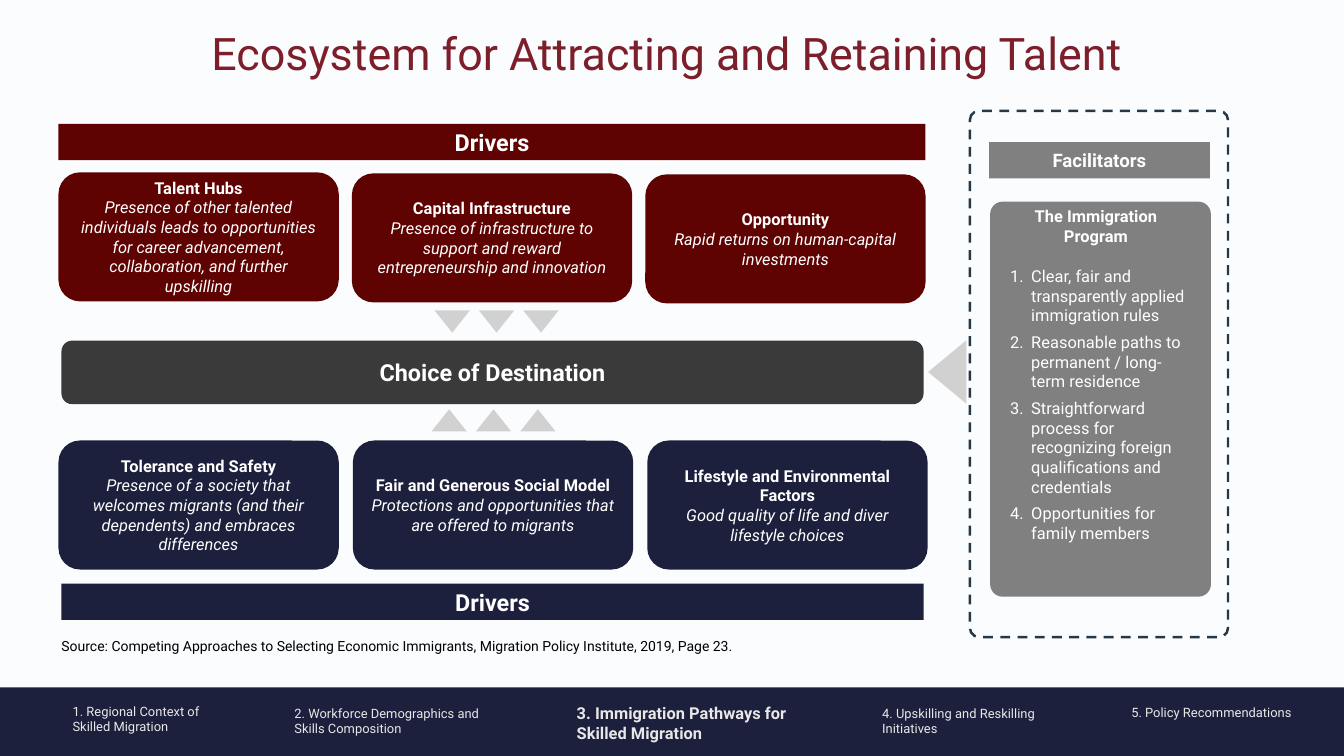
from lxml import etree
from pptx import Presentation
from pptx.dml.color import RGBColor
from pptx.enum import dml, shapes, text
from pptx.oxml import ns
from pptx.util import Inches, Pt

FONT = "Roboto"
PAPER = RGBColor(0xFB, 0xFC, 0xFE)
NAVY = RGBColor(0x1D, 0x20, 0x3C)
MAROON = RGBColor(0x5E, 0x02, 0x02)
CRIMSON = RGBColor(0x7D, 0x1E, 0x2B)
CHARCOAL = RGBColor(0x3A, 0x3A, 0x3A)
GREY = RGBColor(0x80, 0x80, 0x80)
ARROW_GREY = RGBColor(0xD1, 0xD1, 0xD1)
DASH_BLUE = RGBColor(0x26, 0x37, 0x45)
FOOTER_TEXT = RGBColor(0xE8, 0xE8, 0xE8)
WHITE = RGBColor(0xFF, 0xFF, 0xFF)
BLACK = RGBColor(0x00, 0x00, 0x00)

RECT = shapes.MSO_SHAPE.RECTANGLE
ROUND = shapes.MSO_SHAPE.ROUNDED_RECTANGLE
TRIANGLE = shapes.MSO_SHAPE.ISOSCELES_TRIANGLE
CENTER = text.PP_ALIGN.CENTER
LEFT = text.PP_ALIGN.LEFT

UPPER_DRIVERS = [
    ("Talent Hubs", "Presence of other talented individuals leads to opportunities "
     "for career advancement, collaboration, and further upskilling"),
    ("Capital Infrastructure", "Presence of infrastructure to support and reward "
     "entrepreneurship and innovation"),
    ("Opportunity", "Rapid returns on human-capital investments"),
]
LOWER_DRIVERS = [
    ("Tolerance and Safety", "Presence of a society that welcomes migrants "
     "(and their dependents) and embraces differences"),
    ("Fair and Generous Social Model",
     "Protections and opportunities that are offered to migrants"),
    ("Lifestyle and Environmental Factors",
     "Good quality of life and diver lifestyle choices"),
]
PROGRAM_RULES = [
    "Clear, fair and transparently applied immigration rules",
    "Reasonable paths to permanent / long-term residence",
    "Straightforward process for recognizing foreign qualifications and credentials",
    "Opportunities for family members",
]
# left, top, width, size, bold, lines
CHAPTERS = [
    (0.72, 6.98, 1.3, 9.2, False, ["1. Regional Context of", "Skilled Migration"]),
    (2.92, 7, 1.85, 9.2, False, ["2. Workforce Demographics and Skills Composition"]),
    (5.72, 6.98, 2.09, 11.7, True, ["3. Immigration Pathways for Skilled Migration"]),
    (8.75, 7, 1.53, 9.2, False, ["4. Upskilling and Reskilling Initiatives"]),
    (11.22, 6.99, 1.65, 9.2, False, ["5. Policy Recommendations"]),
]


def add_block(slide, kind, at, fill=None, radius=None, rotation=0):
    block = slide.shapes.add_shape(kind, *map(Inches, at))
    block.shadow.inherit = False
    block.line.fill.background()
    block.rotation = rotation
    if fill is None:
        block.fill.background()
    else:
        block.fill.solid()
        block.fill.fore_color.rgb = fill
    if radius is not None:
        block.adjustments[0] = radius
    return block


def write(frame, lines, size, color=WHITE, bold=False, align=CENTER):
    """Write one paragraph per line and return the paragraphs."""
    frame.word_wrap = True
    for index, line in enumerate(lines):
        paragraph = frame.paragraphs[0] if index == 0 else frame.add_paragraph()
        paragraph.alignment = align
        run = paragraph.add_run()
        run.text = line
        run.font.name = FONT
        run.font.size = Pt(size)
        run.font.bold = bold
        run.font.color.rgb = color
    return frame.paragraphs


def add_label(slide, at, lines, size, color, bold=False, align=LEFT, inset=True):
    frame = slide.shapes.add_textbox(*map(Inches, at)).text_frame
    if not inset:
        frame.margin_left = frame.margin_right = 0
        frame.margin_top = frame.margin_bottom = 0
    return write(frame, lines, size, color, bold, align)


def add_banner(slide, kind, at, fill, caption, size):
    banner = add_block(slide, kind, at, fill)
    banner.text_frame.vertical_anchor = text.MSO_ANCHOR.MIDDLE
    write(banner.text_frame, [caption], size, bold=True)


def add_driver_row(slide, top, pitch, step, fill, drivers):
    for column, driver in enumerate(drivers):
        at = (0.58 + column * pitch, top + column * step, 2.78, 1.28)
        frame = add_block(slide, ROUND, at, fill).text_frame
        frame.margin_left = frame.margin_right = Inches(0.09)
        frame.vertical_anchor = text.MSO_ANCHOR.MIDDLE
        heading, detail = write(frame, driver, 11.7)
        heading.runs[0].font.bold = True
        detail.runs[0].font.italic = True


def add_arrow_row(slide, left, top, rotation):
    for index in range(3):
        add_block(slide, TRIANGLE, (left + index * 0.44, top, 0.35, 0.22),
                  ARROW_GREY, rotation=rotation)


def number_paragraph(paragraph):
    properties = paragraph._p.get_or_add_pPr()
    properties.set("marL", str(Inches(0.21)))
    properties.set("indent", str(-Inches(0.21)))
    etree.SubElement(properties, ns.qn("a:buFont"), typeface="+mj-lt")
    etree.SubElement(properties, ns.qn("a:buAutoNum"), type="arabicPeriod")
    paragraph.space_after = Pt(5)


def add_facilitators(slide):
    outline = add_block(slide, ROUND, (9.62, 1.1, 2.56, 5.22), radius=0.035)
    outline.line.color.rgb = DASH_BLUE
    outline.line.width = Pt(1.75)
    outline.line.dash_style = dml.MSO_LINE.DASH
    add_banner(slide, RECT, (9.81, 1.41, 2.19, 0.36), GREY, "Facilitators", 13.3)
    add_block(slide, ROUND, (9.82, 2, 2.19, 3.92), GREY, radius=0.057)
    add_label(slide, (9.89, 2, 1.96, 0.49), ["The Immigration Program"],
              11.7, WHITE, bold=True, align=CENTER)
    rules = add_block(slide, RECT, (9.92, 2.59, 1.96, 2.86), GREY)
    rules.text_frame.vertical_anchor = text.MSO_ANCHOR.TOP
    for paragraph in write(rules.text_frame, PROGRAM_RULES, 11.7, align=LEFT):
        number_paragraph(paragraph)


def add_footer(slide):
    add_block(slide, RECT, (0, 6.82, 13.33, 0.68), NAVY)
    for left, top, width, size, bold, lines in CHAPTERS:
        add_label(slide, (left, top, width, 0.34), lines, size, FOOTER_TEXT,
                  bold=bold, inset=False)


def main():
    deck = Presentation()
    deck.slide_width, deck.slide_height = Inches(13.33), Inches(7.5)
    slide = deck.slides.add_slide(deck.slide_layouts[6])
    slide.background.fill.solid()
    slide.background.fill.fore_color.rgb = PAPER

    add_footer(slide)

    # Title
    title = add_label(slide, (1.98, 0.29, 9.38, 0.56),
                      ["Ecosystem for Attracting and Retaining Talent "],
                      32, CRIMSON, align=CENTER)
    title[0].line_spacing = Pt(32.5)

    # Drivers above and below the choice of destination
    add_banner(slide, RECT, (0.58, 1.23, 8.6, 0.36), MAROON, "Drivers", 16.7)
    add_driver_row(slide, 1.71, 2.91, 0.01, MAROON, UPPER_DRIVERS)
    add_arrow_row(slide, 4.31, 3.08, 180)
    add_banner(slide, ROUND, (0.61, 3.38, 8.55, 0.63), CHARCOAL,
               "Choice of Destination", 16.7)
    add_arrow_row(slide, 4.28, 4.06, 0)
    add_driver_row(slide, 4.37, 2.92, 0, NAVY, LOWER_DRIVERS)
    add_banner(slide, RECT, (0.61, 5.79, 8.55, 0.36), NAVY, "Drivers", 16.7)

    # Facilitators feeding in from the right
    add_facilitators(slide)
    add_block(slide, TRIANGLE, (9.08, 3.5, 0.63, 0.38), ARROW_GREY, rotation=270)

    # Source line
    add_label(slide, (0.61, 6.32, 10.97, 0.17),
              ["Source: Competing Approaches to Selecting Economic Immigrants, "
               "Migration Policy Institute, 2019, Page 23."],
              10, BLACK, inset=False)

    deck.save("out.pptx")


if __name__ == "__main__":
    main()
